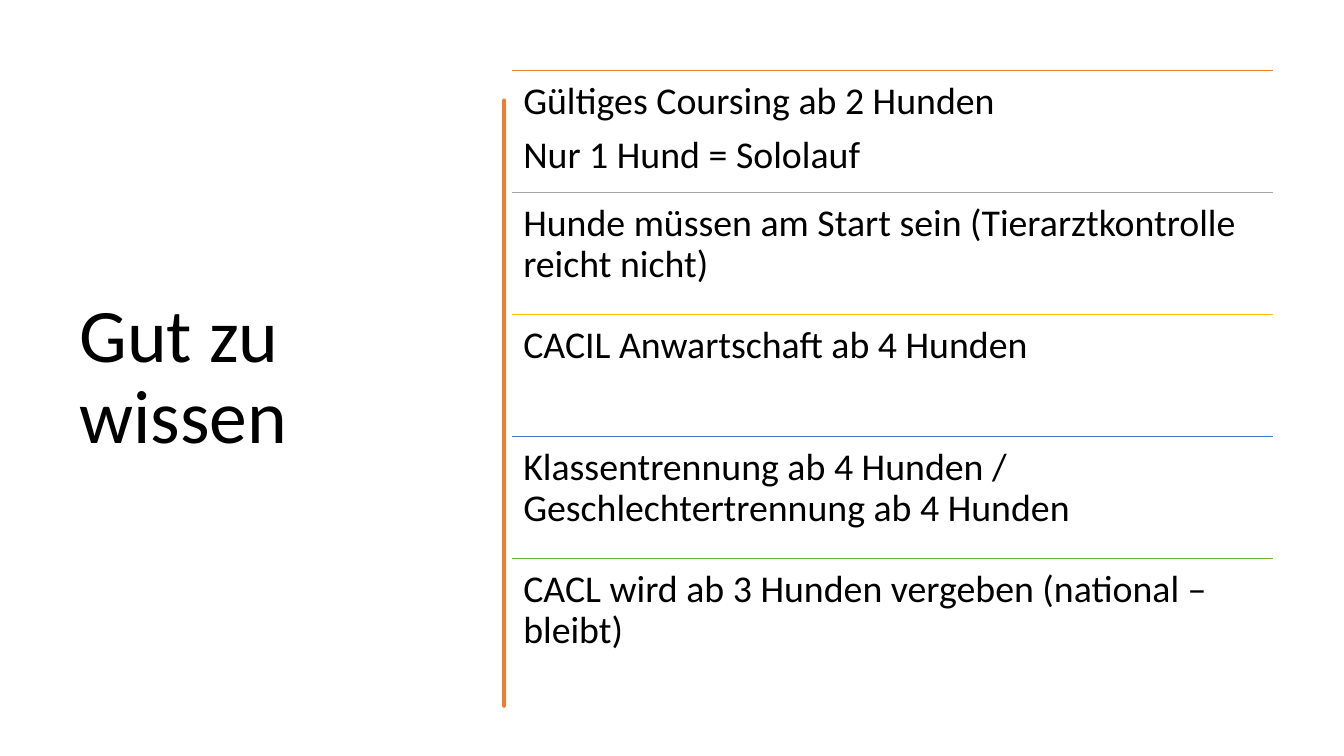
from dataclasses import dataclass

from lxml import etree
from pptx import Presentation
from pptx.dml.color import RGBColor
from pptx.enum import shapes, text
from pptx.oxml.ns import qn
from pptx.util import Inches, Pt


@dataclass(frozen=True)
class Theme:
    font: str = "Calibri"
    ink: str = "000000"
    brush: str = "ED7D31"
    title_size: int = 54
    rule_size: int = 27
    brush_width: float = 3.25
    line_width: int = 1


theme = Theme()

rules = [
    ("ED7D31", ["Gültiges Coursing ab 2 Hunden", "Nur 1 Hund = Sololauf"]),
    ("A5A5A5", ["Hunde müssen am Start sein (Tierarztkontrolle reicht nicht)"]),
    ("FFC000", ["CACIL Anwartschaft ab 4 Hunden"]),
    ("4472C4", ["Klassentrennung ab 4 Hunden / Geschlechtertrennung ab 4 Hunden"]),
    ("70AD47", ["CACL wird ab 3 Hunden vergeben (national – bleibt)"]),
]

presentation = Presentation()
presentation.slide_width = Inches(13.33)
presentation.slide_height = Inches(7.5)
slide = presentation.slides.add_slide(presentation.slide_layouts[6])


def add_text(left, top, width, height, lines, size, space_after=0):
    box = slide.shapes.add_textbox(Inches(left), Inches(top), Inches(width), Inches(height))
    frame = box.text_frame
    frame.word_wrap = True
    frame.text = "\n".join(lines)
    for paragraph in frame.paragraphs:
        paragraph.line_spacing = 0.9
        paragraph.space_after = Pt(space_after)
        font = paragraph.runs[0].font
        font.name = theme.font
        font.size = Pt(size)
        font.color.rgb = RGBColor.from_string(theme.ink)
    return frame


title_frame = add_text(0.69, 0.7, 3.74, 6.11, ["Gut zu wissen"], theme.title_size)
title_frame.vertical_anchor = text.MSO_ANCHOR.MIDDLE

right_edge = [
    (4.75, 0.84), (4.76, 1.1), (4.75, 1.5), (4.75, 2.26), (4.75, 2.94),
    (4.76, 3.3), (4.75, 3.6), (4.76, 4.0), (4.75, 4.36), (4.73, 4.7),
    (4.75, 5.1), (4.76, 5.5), (4.75, 5.84), (4.74, 6.3), (4.75, 6.76),
]
left_edge = [
    (4.73, 6.76), (4.72, 6.4), (4.73, 6.13), (4.73, 5.57), (4.72, 5.2),
    (4.73, 4.77), (4.74, 4.45), (4.73, 4.15), (4.72, 3.7), (4.73, 3.35),
    (4.72, 2.9), (4.73, 2.5), (4.74, 2.1), (4.72, 1.7), (4.73, 1.3), (4.73, 0.84),
]
outline = right_edge + left_edge
builder = slide.shapes.build_freeform(*outline[0], scale=Inches(1))
builder.add_line_segments(outline[1:], close=True)
brush = builder.convert_to_shape()
brush.shadow.inherit = False
brush.fill.solid()
brush.fill.fore_color.rgb = RGBColor.from_string(theme.brush)
brush.line.color.rgb = RGBColor.from_string(theme.brush)
brush.line.width = Pt(theme.brush_width)
etree.SubElement(brush.line._get_or_add_ln(), qn("a:round"))

rules_left, rules_top, rules_width, row_height = 5.08, 0.7, 7.55, 1.21
for index, (color, lines) in enumerate(rules):
    top = rules_top + index * row_height
    divider = slide.shapes.add_connector(
        shapes.MSO_CONNECTOR.STRAIGHT,
        Inches(rules_left), Inches(top), Inches(rules_left + rules_width), Inches(top),
    )
    divider.line.color.rgb = RGBColor.from_string(color)
    divider.line.width = Pt(theme.line_width)
    etree.SubElement(divider._element.spPr, qn("a:effectLst"))

    frame = add_text(rules_left, top, rules_width, row_height, lines,
                     theme.rule_size, theme.rule_size * 0.35)
    frame.margin_left = frame.margin_right = Inches(0.11)
    frame.margin_top = frame.margin_bottom = Inches(0.11)

presentation.save("out.pptx")
